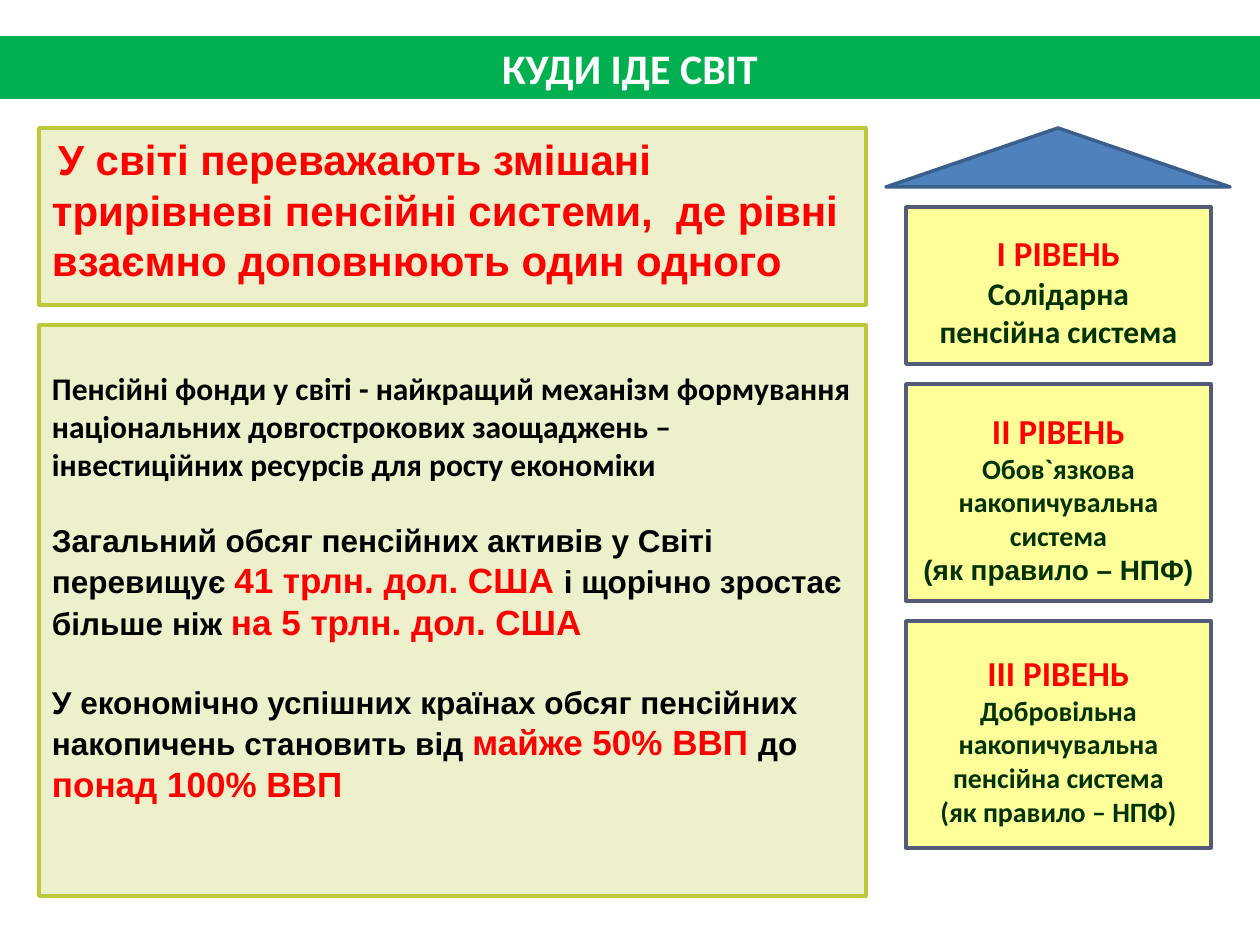
from dataclasses import dataclass

from lxml import etree
from pptx import Presentation
from pptx import util as u
from pptx.dml.color import RGBColor
from pptx.enum import shapes, text
from pptx.oxml import ns

PX_PER_INCH = 126
LEFT, CENTER = text.PP_ALIGN.LEFT, text.PP_ALIGN.CENTER


def px(length):
    return u.Emu(round(length * 914400 / PX_PER_INCH))


@dataclass(frozen=True)
class Theme:
    heading_font: str = "Calibri"
    body_font: str = "Arial"
    white: str = "FFFFFF"
    black: str = "000000"
    accent: str = "FF0000"
    level_text: str = "003300"
    banner: str = "00B050"
    panel: str = "EDF0CA"
    panel_line: str = "BCC837"
    level: str = "FFFF99"
    level_line: str = "545B78"
    roof: str = "4F81BD"
    roof_line: str = "3A5F8C"
    lead: int = 24
    emphasis: int = 20
    body: int = 18
    small: int = 16
    outline: int = 2


THEME = Theme()


def run(content, *, size=THEME.body, font=THEME.heading_font, color=THEME.black):
    """Describe one bold run as its text and format."""
    return content, size, font, color


def write_paragraph(paragraph, runs, *, align=LEFT, before=0, indent=0):
    paragraph.alignment = align
    paragraph.space_before = u.Pt(before)
    properties = paragraph._p.get_or_add_pPr()
    properties.set("marL", "0")
    properties.set("indent", str(px(indent)))
    etree.SubElement(properties, ns.qn("a:buNone"))
    for content, size, font, color in runs:
        part = paragraph.add_run()
        part.text = content
        part.font.size = u.Pt(size)
        part.font.name = font
        part.font.bold = True
        part.font.color.rgb = RGBColor.from_string(color)


class SlideBuilder:
    def __init__(self, slide, theme):
        self.slide = slide
        self.theme = theme

    def paint(self, shape, fill, line=None):
        shape.fill.solid()
        shape.fill.fore_color.rgb = RGBColor.from_string(fill)
        if line:
            shape.line.color.rgb = RGBColor.from_string(line)
            shape.line.width = u.Pt(self.theme.outline)
        else:
            shape.line.fill.background()

    def shape(self, kind, box, fill, line):
        shape = self.slide.shapes.add_shape(kind, *map(px, box))
        shape.shadow.inherit = False
        self.paint(shape, fill, line)
        return shape

    def placeholder(self, index, box, fill, line=None):
        holder = self.slide.placeholders[index]
        holder.left, holder.top, holder.width, holder.height = map(px, box)
        self.paint(holder, fill, line)
        return holder

    def fill_text(self, shape, paragraphs, *, anchor=text.MSO_ANCHOR.TOP, top=6, gaps=None, **layout):
        frame = shape.text_frame
        frame.word_wrap = True
        frame.auto_size = text.MSO_AUTO_SIZE.NONE
        frame.vertical_anchor = anchor
        frame.margin_left = frame.margin_right = px(13)
        frame.margin_top, frame.margin_bottom = px(top), px(6)
        for number, runs in enumerate(paragraphs):
            paragraph = frame.add_paragraph() if number else frame.paragraphs[0]
            write_paragraph(paragraph, runs, before=gaps[number] if gaps else 0, **layout)

    def title(self, content, box):
        banner = self.placeholder(0, box, self.theme.banner)
        heading = run(content, size=self.theme.lead, color=self.theme.white)
        self.fill_text(banner, [[heading]], anchor=text.MSO_ANCHOR.MIDDLE, align=CENTER)

    def body(self, paragraphs, box, **layout):
        panel = self.placeholder(1, box, self.theme.panel, self.theme.panel_line)
        self.fill_text(panel, paragraphs, **layout)

    def statement(self, content, box):
        panel = self.shape(shapes.MSO_SHAPE.RECTANGLE, box, self.theme.panel, self.theme.panel_line)
        claim = run(content, size=self.theme.lead, font=self.theme.body_font, color=self.theme.accent)
        self.fill_text(panel, [[claim]], indent=6)

    def level(self, heading, lines, box):
        """Draw a pension level; each line is its text, size and font."""
        card = self.shape(shapes.MSO_SHAPE.RECTANGLE, box, self.theme.level, self.theme.level_line)
        paragraphs = [[run(heading, size=self.theme.emphasis, color=self.theme.accent)]]
        paragraphs += [[run(line, size=size, font=font, color=self.theme.level_text)]
                       for line, size, font in lines]
        self.fill_text(card, paragraphs, anchor=text.MSO_ANCHOR.MIDDLE, top=16, align=CENTER)

    def roof(self, box):
        self.shape(shapes.MSO_SHAPE.ISOSCELES_TRIANGLE, box, self.theme.roof, self.theme.roof_line)


def plain(content):
    return run(content, font=THEME.body_font)


def figure(content):
    return run(content, size=THEME.emphasis, font=THEME.body_font, color=THEME.accent)


FACTS = [
    [run("Пенсійні фонди у світі - найкращий механізм формування національних "
         "довгострокових заощаджень – інвестиційних ресурсів для росту економіки")],
    [plain("Загальний обсяг пенсійних активів у Світі перевищує "), figure("41 трлн. дол. США "),
     plain("і щорічно зростає більше ніж "), figure("на 5 трлн. дол. США")],
    [plain("У економічно успішних країнах обсяг пенсійних накопичень становить від "),
     figure("майже 50% ВВП "), plain("до "), figure("понад 100% ВВП")],
]

CALIBRI, ARIAL = THEME.heading_font, THEME.body_font
LEVELS = [
    ("І РІВЕНЬ", 157, [("Солідарна", THEME.body, CALIBRI),
                       ("пенсійна система", THEME.body, CALIBRI)]),
    ("ІІ РІВЕНЬ", 217, [("Обов`язкова накопичувальна система", THEME.small, CALIBRI),
                        ("(як правило – НПФ)", THEME.small, ARIAL)]),
    ("ІІІ РІВЕНЬ", 227, [("Добровільна накопичувальна", THEME.small, CALIBRI),
                         ("пенсійна система", THEME.small, CALIBRI),
                         ("(як правило – НПФ)", THEME.small, CALIBRI)]),
]


def main():
    deck = Presentation()
    deck.slide_width, deck.slide_height = px(1260), px(945)
    builder = SlideBuilder(deck.slides.add_slide(deck.slide_layouts[1]), THEME)

    builder.title("КУДИ ІДЕ СВІТ", (0, 36, 1260, 63))
    builder.statement("У світі переважають змішані трирівневі пенсійні системи,  "
                      "де рівні взаємно доповнюють один одного", (39, 128, 827, 177))
    builder.body(FACTS, (39, 325, 827, 571), top=44, gaps=(0, 22, 23))

    builder.roof((886, 128, 344, 59))
    level_top, level_gap = 207, 20
    for heading, height, lines in LEVELS:
        builder.level(heading, lines, (906, level_top, 305, height))
        level_top += height + level_gap

    deck.save("out.pptx")


if __name__ == "__main__":
    main()
